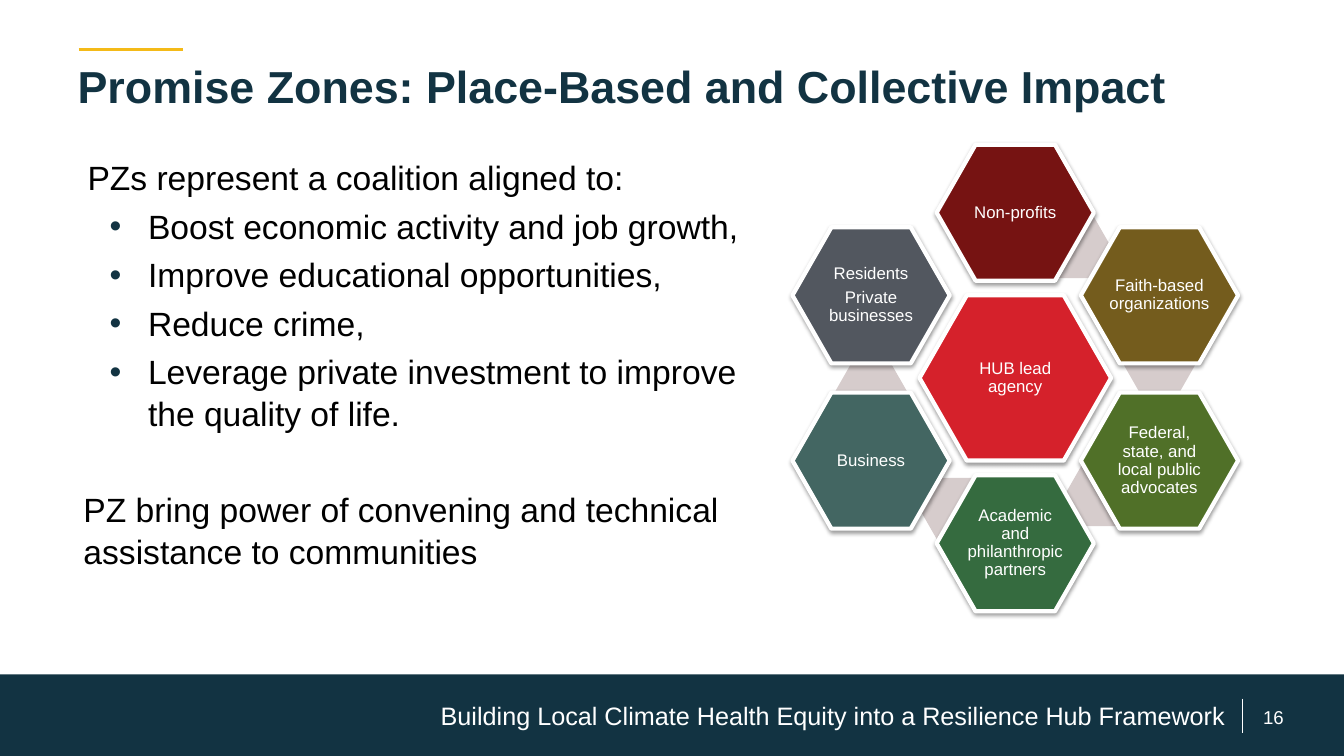
import pptx
import pptx.util
import pptx.oxml
import pptx.oxml.ns
import pptx.dml.color
import pptx.enum.shapes
import pptx.enum.text
from pptx.util import Inches

COLORS = {
    "navy": "123342", "gold": "F4BA18", "white": "FFFFFF", "black": "000000",
    "link": "D6CCCC", "red": "D5212B", "maroon": "761312", "brown": "745C1D",
    "olive": "507028", "green": "356B3F", "teal": "436662", "slate": "52575F",
}
NAMESPACE = pptx.oxml.ns.nsdecls("a")
ANCHOR = pptx.enum.text.MSO_ANCHOR
ALIGN = pptx.enum.text.PP_ALIGN
SHAPE = pptx.enum.shapes.MSO_SHAPE

HUB_CENTER = (10.07, 3.75)
COLUMN, ROW = 1.43, 0.82
# Column and row step of each partner around the hub, clockwise from the top
PARTNERS = [
    (0, -2, "maroon", ["Non-profits"]),
    (1, -1, "brown", ["Faith-based organizations"]),
    (1, 1, "olive", ["Federal, state, and local public advocates"]),
    (0, 2, "green", ["Academic and philanthropic partners"]),
    (-1, 1, "teal", ["Business"]),
    (-1, -1, "slate", ["Residents", "Private businesses"]),
]
# Centre of the link drawn beneath each partner, measured from the hub
LINKS = [None, (0.59, -1.3), (1.43, -0.14), (0.85, 1.16), (-0.59, 1.3), (-1.43, 0.14)]
# The first link lies beneath the first partner, the next beneath the second
LINKS = LINKS[1:] + [None]

GOALS = [
    "Boost economic activity and job growth,",
    "Improve educational opportunities,",
    "Reduce crime,",
    "Leverage private investment to improve the quality of life.",
]


def rgb(name):
    return pptx.dml.color.RGBColor.from_string(COLORS[name])


class SlideBuilder:
    font_name = "Arial"

    def __init__(self, slide):
        self.slide = slide

    def add_run(self, paragraph, text, size, color, bold=False):
        run = paragraph.add_run()
        run.text = text
        run.font.name = self.font_name
        run.font.size = pptx.util.Pt(size)
        run.font.bold = bold
        run.font.color.rgb = rgb(color)

    def title(self, text, left, top, width, height):
        title = self.slide.shapes.title
        title.left, title.top = Inches(left), Inches(top)
        title.width, title.height = Inches(width), Inches(height)
        title.text_frame.vertical_anchor = ANCHOR.TOP
        paragraph = title.text_frame.paragraphs[0]
        paragraph.alignment = ALIGN.LEFT
        self.add_run(paragraph, text, 32, "navy", bold=True)

    def text_box(self, left, top, width, height, anchor=ANCHOR.MIDDLE):
        box = self.slide.shapes.add_textbox(
            Inches(left), Inches(top), Inches(width), Inches(height))
        box.text_frame.word_wrap = True
        box.text_frame.vertical_anchor = anchor
        return box.text_frame

    def label(self, text, left, top, width, height, size, alignment):
        paragraph = self.text_box(left, top, width, height).paragraphs[0]
        paragraph.alignment = alignment
        self.add_run(paragraph, text, size, "white")

    def body_paragraph(self, paragraph, text, margin, before=0, bullet=False):
        properties = paragraph._p.get_or_add_pPr()
        properties.set("marL", str(Inches(margin)))
        properties.set("indent", str(Inches(-0.38 if bullet else 0)))
        paragraph.line_spacing = 1.03
        paragraph.space_before = pptx.util.Pt(before)
        if bullet:
            for markup in (
                f'<a:buClr {NAMESPACE}><a:srgbClr val="{COLORS["navy"]}"/></a:buClr>',
                f'<a:buFont {NAMESPACE} typeface="{self.font_name}"/>',
                f'<a:buChar {NAMESPACE} char="•"/>',
            ):
                properties.append(pptx.oxml.parse_xml(markup))
        self.add_run(paragraph, text, 24, "black")

    def line(self, start, end, color, width):
        connector = self.slide.shapes.add_connector(
            pptx.enum.shapes.MSO_CONNECTOR.STRAIGHT,
            *(Inches(value) for value in start + end))
        connector.line.color.rgb = rgb(color)
        connector.line.width = pptx.util.Pt(width)
        connector._element.spPr.append(
            pptx.oxml.parse_xml(f"<a:effectLst {NAMESPACE}/>"))

    def shape(self, kind, left, top, width, height, color):
        shape = self.slide.shapes.add_shape(
            kind, Inches(left), Inches(top), Inches(width), Inches(height))
        shape.shadow.inherit = False
        shape.fill.solid()
        shape.fill.fore_color.rgb = rgb(color)
        shape.line.fill.background()
        return shape

    def hexagon(self, center, width, height, color):
        shape = self.shape(SHAPE.HEXAGON, center[0] - width / 2,
                           center[1] - height / 2, width, height, color)
        shape.adjustments[0] = 0.286
        return shape

    def member(self, center, width, height, color, texts):
        """Draw a white-edged, shadowed hexagon with one paragraph per text."""
        shape = self.hexagon(center, width, height, color)
        shape.line.color.rgb = rgb("white")
        shape.line.width = pptx.util.Pt(3)
        effects = shape._element.spPr.find(pptx.oxml.ns.qn("a:effectLst"))
        effects.append(pptx.oxml.parse_xml(
            f'<a:outerShdw {NAMESPACE} blurRad="{pptx.util.Pt(3.1)}" '
            f'dist="{pptx.util.Pt(1.6)}" dir="5400000" rotWithShape="0">'
            f'<a:srgbClr val="{COLORS["black"]}"><a:alpha val="38000"/></a:srgbClr>'
            "</a:outerShdw>"))
        frame = shape.text_frame
        frame.word_wrap = True
        frame.vertical_anchor = ANCHOR.MIDDLE
        frame.margin_left = frame.margin_right = Inches(0.02)
        frame.margin_top = frame.margin_bottom = Inches(0.02)
        for index, text in enumerate(texts):
            paragraph = frame.add_paragraph() if index else frame.paragraphs[0]
            paragraph.alignment = ALIGN.CENTER
            paragraph.line_spacing = 0.9
            paragraph.space_after = pptx.util.Pt(4.2)
            self.add_run(paragraph, text, 12, "white")


def main():
    presentation = pptx.Presentation()
    presentation.slide_width = Inches(13.33)
    presentation.slide_height = Inches(7.5)
    builder = SlideBuilder(presentation.slides.add_slide(presentation.slide_layouts[5]))

    builder.line((0.78, 0.49), (1.82, 0.49), "gold", 2.5)
    builder.title("Promise Zones: Place-Based and Collective Impact", 0.67, 0.53, 12, 0.97)

    body = builder.text_box(0.67, 1.5, 6.9, 4.73, ANCHOR.TOP)
    builder.body_paragraph(body.paragraphs[0], "PZs represent a coalition aligned to:", 0.1)
    for goal in GOALS:
        builder.body_paragraph(body.add_paragraph(), goal, 0.7, before=5, bullet=True)
    builder.body_paragraph(
        body.add_paragraph(),
        "PZ bring power of convening and technical assistance to communities",
        0.06, before=39)

    builder.member(HUB_CENTER, 1.9, 1.64, "red", ["HUB lead agency"])
    hub_x, hub_y = HUB_CENTER
    # Each link goes behind the partner that follows it
    for (column, row, color, texts), link in zip(PARTNERS, LINKS):
        if link:
            builder.hexagon((hub_x + link[0], hub_y + link[1]), 0.72, 0.62, "link")
        center = (hub_x + column * COLUMN, hub_y + row * ROW)
        builder.member(center, 1.56, 1.35, color, texts)

    builder.shape(SHAPE.RECTANGLE, 0, 6.69, 13.33, 0.81, "navy")
    builder.label("Building Local Climate Health Equity into a Resilience Hub Framework",
                  4, 6.93, 8.25, 0.33, 18, ALIGN.RIGHT)
    builder.line((12.32, 6.93), (12.32, 7.27), "white", 0.75)
    builder.label("16", 12.24, 6.97, 0.78, 0.28, 13.3, ALIGN.CENTER)


    presentation.save("out.pptx")


if __name__ == "__main__":
    main()
